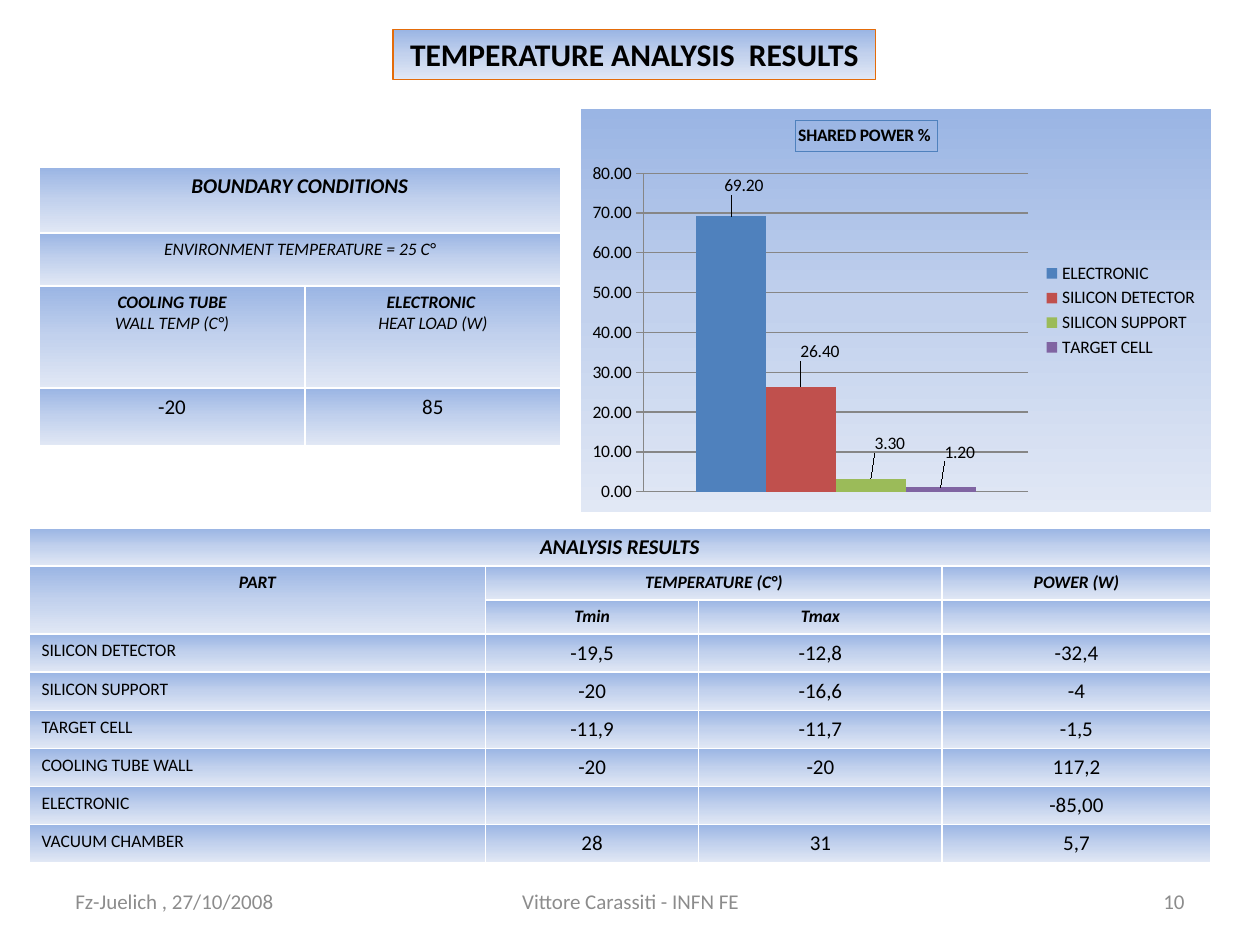
from pptx import Presentation
from pptx.chart.data import CategoryChartData as Data
from pptx.dml.color import RGBColor as RGB
from pptx.enum.chart import XL_CHART_TYPE as Kind, XL_LEGEND_POSITION as Side
from pptx.enum.chart import XL_LABEL_POSITION as Spot, XL_TICK_MARK as Tick
from pptx.enum.text import MSO_ANCHOR as Anchor, MSO_AUTO_SIZE as Auto, PP_ALIGN as Align
from pptx.oxml import parse_xml as build
from pptx.oxml.ns import nsdecls, qn
from pptx.util import Inches, Pt

WIDE, HIGH = Inches(10), Inches(7.5)
STOPS = ((0, "9AB5E4"), (50, "C2D1ED"), (100, "E1E8F5"))
BARS = (
    ("ELECTRONIC", 69.2, "4F81BD", (0.02, -0.04)),
    ("SILICON DETECTOR", 26.4, "C0504D", (0.03, -0.05)),
    ("SILICON SUPPORT", 3.3, "9BBB59", (0.03, -0.05)),
    ("TARGET CELL", 1.2, "8064A2", (0.03, -0.05)),
)
BOUNDS = (
    ("BOUNDARY CONDITIONS", ""),
    ("ENVIRONMENT TEMPERATURE = 25 C°", ""),
    ("COOLING TUBE\nWALL TEMP (C°)", "ELECTRONIC \nHEAT LOAD (W)"),
    ("-20", "85"),
)
RESULTS = (
    ("ANALYSIS RESULTS", "", "", ""),
    ("PART", "TEMPERATURE (C°)", "", "POWER (W)"),
    ("", "Tmin", "Tmax", ""),
    ("SILICON DETECTOR", "-19,5", "-12,8", "-32,4"),
    ("SILICON SUPPORT", "-20", "-16,6", "-4"),
    ("TARGET CELL", "-11,9", "-11,7", "-1,5"),
    ("COOLING TUBE WALL", "-20", "-20", "117,2"),
    ("ELECTRONIC", "", "", "-85,00"),
    ("VACUUM CHAMBER", "28", "31", "5,7"),
)


def tint(code):
    return RGB.from_string(code)


def area(x, y, w, h):
    return tuple(int(side * part / 100) for side, part in
                 zip((WIDE, HIGH, WIDE, HIGH), (x, y, w, h)))


def blend():
    stops = "".join(f'<a:gs pos="{pos * 1000}"><a:srgbClr val="{code}"/></a:gs>'
                    for pos, code in STOPS)
    return build(f'<a:gradFill {nsdecls("a")} rotWithShape="1"><a:gsLst>{stops}</a:gsLst>'
                 '<a:lin ang="5400000" scaled="0"/></a:gradFill>')


def style(para, size, bold=False, slant=False, align=Align.CENTER, code="000000"):
    para.alignment = align
    font = para.font
    font.name, font.size, font.bold, font.italic = "Calibri", Pt(size), bold, slant
    font.color.rgb = tint(code)
    if not para.text:
        para._p.get_or_add_endParaRPr().set("sz", str(size * 100))


def layout(host, index, **vals):
    old = host.find(qn("c:layout"))
    if old is not None:
        host.remove(old)
    modes = "".join(f'<c:{key}Mode val="edge"/>' for key in "xy") if index != 1 or host.tag == qn("c:title") else ""
    spots = "".join(f'<c:{key} val="{val}"/>' for key, val in vals.items())
    inner = '<c:layoutTarget val="inner"/>' if "w" in vals else ""
    host.insert(index, build(f'<c:layout {nsdecls("c")}><c:manualLayout>{inner}{modes}{spots}'
                             '</c:manualLayout></c:layout>'))


def head(slide, box):
    title = slide.shapes.title
    title.left, title.top, title.width, title.height = box
    title._element.spPr.append(blend())
    title.line.color.rgb = tint("E46C0A")
    title.line.width = Pt(0.75)
    frame = title.text_frame
    frame.text = "TEMPERATURE ANALYSIS  RESULTS"
    frame.word_wrap, frame.auto_size = False, Auto.NONE
    frame.vertical_anchor = Anchor.MIDDLE
    style(frame.paragraphs[0], 18, True)


def table(slide, box, rows, cols, lines, spans, look):
    grid = slide.shapes.add_table(len(rows), len(cols), *box).table
    grid.horz_banding = False
    for col, part in zip(grid.columns, cols):
        col.width = int(box[2] * part / sum(cols))
    for row, part in zip(grid.rows, lines):
        row.height = int(box[3] * part / sum(lines))
    for r, row in enumerate(rows):
        for c, text in enumerate(row):
            cell = grid.cell(r, c)
            cell.text = text
            cell._tc.get_or_add_tcPr().append(blend())
            for n, para in enumerate(cell.text_frame.paragraphs):
                style(para, *look(r, c, n))
    for r, c, end, last in spans:
        grid.cell(r, c).merge(grid.cell(end, last))


def bounds(slide, box):
    def look(r, c, n):
        return 12 if r in (0, 3) else 10, r == 0 or r == 2 and n == 0, r < 3

    table(slide, box, BOUNDS, (51, 49), (52, 42, 81, 46),
          ((0, 0, 0, 1), (1, 0, 1, 1)), look)


def results(slide, box):
    def look(r, c, n):
        top = r < 3
        size = 12 if r == 0 or not top and c and RESULTS[r][c] else 10
        return size, top, top, Align.LEFT if not top and c == 0 else Align.CENTER

    table(slide, box, RESULTS, (362, 169, 193, 213), (29, 25, 27) + (30,) * 6,
          ((0, 0, 0, 3), (1, 0, 2, 0), (1, 1, 1, 2)), look)


def power(slide, box):
    data = Data(number_format="0.00")
    data.categories = ["1"]
    for name, val, *_ in BARS:
        data.add_series(name, [val])
    chart = slide.shapes.add_chart(Kind.COLUMN_CLUSTERED, *box, data).chart
    chart.font.name, chart.font.size = "Calibri", Pt(10)
    chart.font.color.rgb = tint("000000")
    back = build(f'<c:spPr {nsdecls("c", "a")}><a:ln><a:noFill/></a:ln></c:spPr>')
    back.insert(0, blend())
    chart._chartSpace.find(qn("c:chart")).addnext(back)

    chart.has_title = True
    title = chart.chart_title
    title.text_frame.text = "SHARED POWER % "
    style(title.text_frame.paragraphs[0], 10, True)
    title.format.line.color.rgb = tint("4F81BD")
    layout(title._element, 1, x=0.34, y=0.03)

    chart.has_legend = True
    chart.legend.position = Side.RIGHT
    chart.legend.include_in_layout = False
    chart.category_axis.visible = False
    axis = chart.value_axis
    axis.minimum_scale, axis.maximum_scale, axis.major_unit = 0, 80, 10
    axis.major_tick_mark = Tick.CROSS
    axis.tick_labels.number_format = "0.00"
    axis.tick_labels.number_format_is_linked = False
    for line in (axis.format.line, axis.major_gridlines.format.line):
        line.color.rgb = tint("868686")

    plot = chart.plots[0]
    plot.vary_by_categories, plot.gap_width = False, 150
    layout(plot._element.getparent(), 0, x=0.1, y=0.16, w=0.61, h=0.79)
    for bar, (_, _, code, (x, y)) in zip(plot.series, BARS):
        bar.format.fill.solid()
        bar.format.fill.fore_color.rgb = tint(code)
        labels = bar.data_labels
        labels.show_value = True
        labels.number_format, labels.number_format_is_linked = "0.00", False
        bar.points[0].data_label.position = Spot.OUTSIDE_END
        label = labels._element.find(qn("c:dLbl"))
        layout(label, 1, x=x, y=y)
        label.insert(2, build(f'<c:numFmt {nsdecls("c")} formatCode="0.00" sourceLinked="0"/>'))


def foot(slide, box, text, align):
    frame = slide.shapes.add_textbox(*box).text_frame
    frame.text = text
    frame.word_wrap, frame.vertical_anchor = True, Anchor.MIDDLE
    style(frame.paragraphs[0], 12, align=align, code="8C8C8C")


def main():
    deck = Presentation()
    deck.slide_width, deck.slide_height = WIDE, HIGH
    slide = deck.slides.add_slide(deck.slide_layouts[5])
    foot(slide, area(34.2, 92.7, 31.7, 5.3), "Vittore Carassiti - INFN FE", Align.CENTER)
    foot(slide, area(71.7, 92.7, 23.3, 5.3), "10", Align.RIGHT)
    foot(slide, area(5, 92.7, 23.3, 5.3), "Fz-Juelich , 27/10/2008", Align.LEFT)
    bounds(slide, area(3.1, 17.7, 41.4, 29.5))
    results(slide, area(2.3, 55.9, 93.8, 35.1))
    head(slide, area(31.2, 3.1, 38.3, 5.3))
    power(slide, area(46.1, 11.5, 50, 42.7))
    deck.save("out.pptx")


if __name__ == "__main__":
    main()
